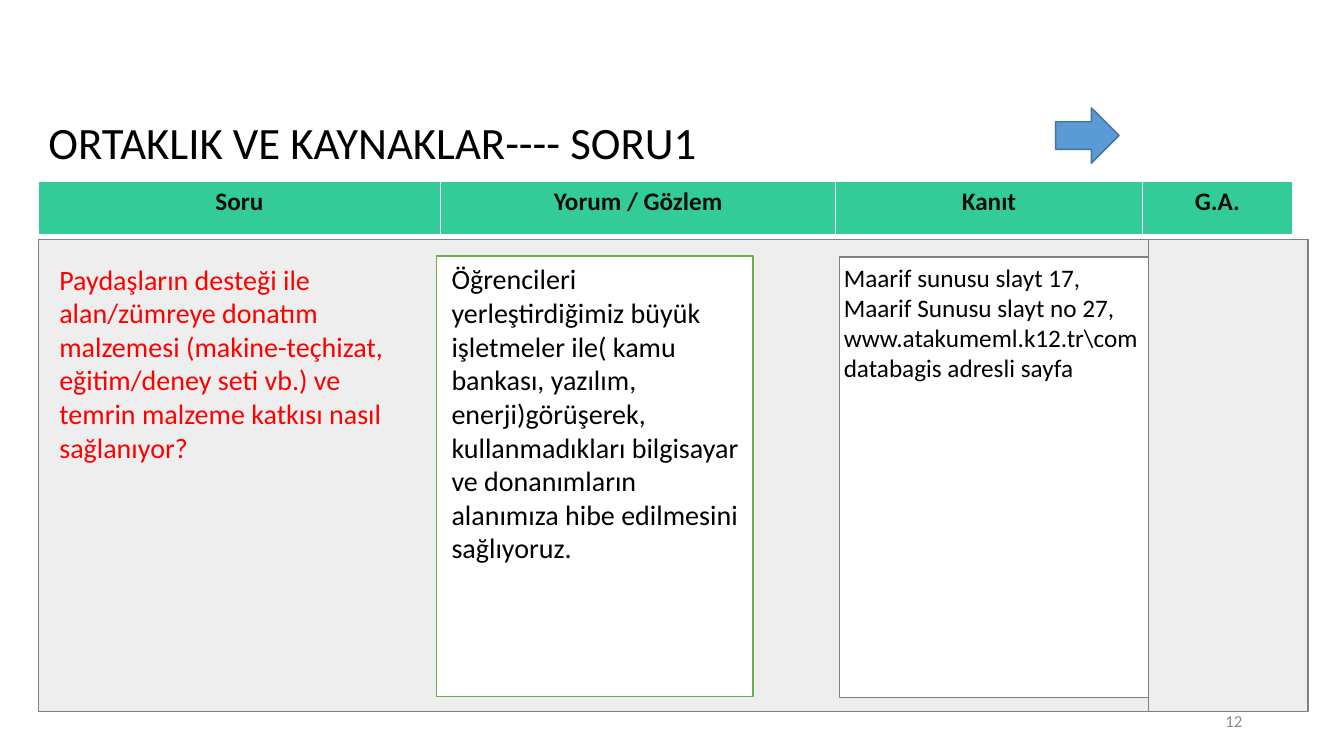
from pptx import Presentation
from pptx.dml.color import RGBColor
from pptx.enum.shapes import MSO_SHAPE
from pptx.enum.text import MSO_ANCHOR, MSO_AUTO_SIZE, PP_ALIGN
from pptx.util import Inches, Pt

RECTANGLE, RIGHT_ARROW = MSO_SHAPE.RECTANGLE, MSO_SHAPE.RIGHT_ARROW
LEFT, CENTER, RIGHT = PP_ALIGN.LEFT, PP_ALIGN.CENTER, PP_ALIGN.RIGHT
TOP, MIDDLE = MSO_ANCHOR.TOP, MSO_ANCHOR.MIDDLE
NO_FIT, GROW = MSO_AUTO_SIZE.NONE, MSO_AUTO_SIZE.SHAPE_TO_FIT_TEXT
TITLE_ONLY = 5
FONT = "Calibri"

BLACK = RGBColor(0x00, 0x00, 0x00)
WHITE = RGBColor(0xFF, 0xFF, 0xFF)
RED = RGBColor(0xFF, 0x00, 0x00)
HEADER_TEXT = RGBColor(0x0D, 0x0D, 0x0D)
HEADER_GREEN = RGBColor(0x33, 0xCC, 0x99)
PANEL_GRAY = RGBColor(0xEE, 0xEE, 0xEE)
BORDER_GRAY = RGBColor(0x80, 0x80, 0x80)
NUMBER_GRAY = RGBColor(0x8C, 0x8C, 0x8C)
BORDER_GREEN = RGBColor(0x70, 0xAD, 0x47)
ARROW_BLUE = RGBColor(0x5B, 0x9B, 0xD5)
ARROW_BORDER = RGBColor(0x43, 0x73, 0x9E)

HEADERS = [("Soru", 3.99), ("Yorum / Gözlem", 3.92), ("Kanıt", 3.04), ("G.A.", 1.49)]
QUESTION = ("Paydaşların desteği ile alan/zümreye donatım malzemesi "
            "(makine-teçhizat, eğitim/deney seti vb.) ve temrin malzeme "
            "katkısı nasıl sağlanıyor?")
COMMENT = ("Öğrencileri yerleştirdiğimiz büyük işletmeler ile( kamu bankası, "
           "yazılım, enerji)görüşerek, kullanmadıkları bilgisayar ve "
           "donanımların alanımıza hibe edilmesini sağlıyoruz.")
EVIDENCE = ["Maarif sunusu slayt 17,",
            "Maarif Sunusu slayt no 27,",
            "www.atakumeml.k12.tr\\comdatabagis adresli sayfa"]


def write(frame, lines, size, color, align=LEFT, anchor=TOP, bold=False):
    frame.word_wrap = True
    frame.vertical_anchor = anchor
    for index, line in enumerate(lines):
        para = frame.add_paragraph() if index else frame.paragraphs[0]
        para.alignment = align
        span = para.add_run()
        span.text = line
        span.font.name = FONT
        span.font.size = Pt(size)
        span.font.bold = bold
        span.font.color.rgb = color


def add_shape(page, place, fill, border=None, width=1, kind=RECTANGLE):
    shape = page.shapes.add_shape(kind, *map(Inches, place))
    shape.shadow.inherit = False
    shape.fill.solid()
    shape.fill.fore_color.rgb = fill
    if border is None:
        shape.line.fill.background()
    else:
        shape.line.color.rgb = border
        shape.line.width = Pt(width)
    return shape


def add_text(page, place, lines, size, color, align=LEFT, anchor=TOP, fit=GROW):
    box = page.shapes.add_textbox(*map(Inches, place))
    write(box.text_frame, lines, size, color, align, anchor)
    box.text_frame.auto_size = fit


def add_title(page, place, text):
    title = page.shapes.title
    title.left, title.top, title.width, title.height = map(Inches, place)
    write(title.text_frame, [text], 32, BLACK, LEFT, MIDDLE)
    title.text_frame.auto_size = NO_FIT
    title.text_frame.paragraphs[0].line_spacing = 0.9


def add_header_table(page, place):
    table = page.shapes.add_table(1, len(HEADERS), *map(Inches, place)).table
    for index, (label, width) in enumerate(HEADERS):
        table.columns[index].width = Inches(width)
        cell = table.cell(0, index)
        cell.fill.solid()
        cell.fill.fore_color.rgb = HEADER_GREEN
        write(cell.text_frame, [label], 18, HEADER_TEXT, CENTER, bold=True)


def main():
    deck = Presentation()
    deck.slide_width, deck.slide_height = Inches(13.33), Inches(7.5)
    page = deck.slides.add_slide(deck.slide_layouts[TITLE_ONLY])

    add_title(page, (0.38, 1.15, 9.93, 0.57), "ORTAKLIK VE KAYNAKLAR---- SORU1")
    add_shape(page, (0.38, 2.38, 12.6, 4.68), PANEL_GRAY, BORDER_GRAY, 0.75)
    add_shape(page, (4.33, 2.54, 3.14, 4.37), WHITE, BORDER_GREEN)
    add_text(page, (9.42, 6.95, 3, 0.4), ["12"], 12, NUMBER_GRAY, RIGHT, MIDDLE, NO_FIT)
    add_header_table(page, (0.38, 1.8, 12.44, 0.53))

    question = add_shape(page, (0.49, 2.55, 3.64, 2.12), PANEL_GRAY)
    write(question.text_frame, [QUESTION], 20, RED)
    question.text_frame.auto_size = GROW
    add_text(page, (4.38, 2.55, 3.08, 3.13), [COMMENT], 20, BLACK)
    add_shape(page, (8.33, 2.55, 3.07, 4.37), WHITE, BORDER_GRAY, 0.75)
    add_text(page, (8.27, 2.55, 3.18, 1.31), EVIDENCE, 18, BLACK)
    add_shape(page, (11.39, 2.38, 1.58, 4.68), PANEL_GRAY, BORDER_GRAY, 0.75)
    add_shape(page, (10.47, 1.07, 0.63, 0.55), ARROW_BLUE, ARROW_BORDER, kind=RIGHT_ARROW)

    deck.save("out.pptx")


if __name__ == "__main__":
    main()
